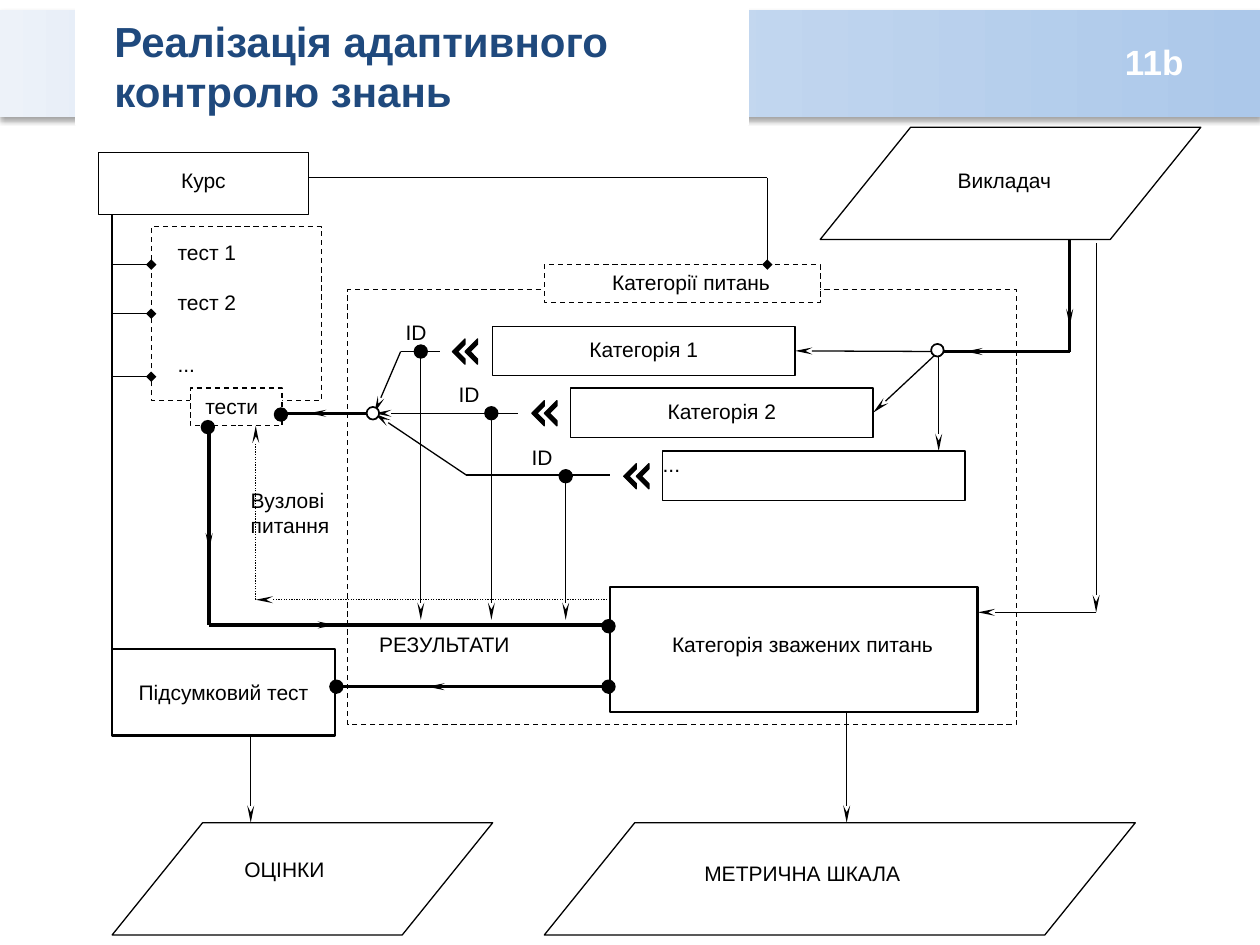
"""Build the slide on adaptive knowledge testing."""
from dataclasses import dataclass

from lxml import etree
from pptx import Presentation
from pptx.dml.color import RGBColor
from pptx.enum.dml import MSO_LINE
from pptx.enum.shapes import MSO_CONNECTOR, MSO_SHAPE
from pptx.enum.text import MSO_ANCHOR, PP_ALIGN
from pptx.oxml import parse_xml
from pptx.oxml.ns import nsdecls, qn
from pptx.util import Inches, Pt

RECT = MSO_SHAPE.RECTANGLE
OVAL = MSO_SHAPE.OVAL
SLANT = MSO_SHAPE.PARALLELOGRAM
NOTCH = MSO_SHAPE.NOTCHED_RIGHT_ARROW
STRAIGHT = MSO_CONNECTOR.STRAIGHT
DASH = MSO_LINE.DASH
DOTS = MSO_LINE.ROUND_DOT
LEFT, MID = PP_ALIGN.LEFT, PP_ALIGN.CENTER
TOP = MSO_ANCHOR.TOP
RIGHT = 3


@dataclass(frozen=True)
class Theme:
    ink: str = "000000"
    paper: str = "FFFFFF"
    title: str = "1F497D"
    band: tuple = ((0, "ACC8EA"), (80, "D8E5F4"), (100, "EDF2F9"))
    font: str = "Arial"
    body: float = 12
    head: float = 24
    mark: float = 20
    thin: float = 0.75
    ring: float = 1
    bold: float = 1.5
    thick: float = 2


@dataclass(frozen=True)
class Box:
    at: tuple
    text: str = ""
    inset: tuple = (0, 0)
    align: PP_ALIGN = MID
    kind: MSO_SHAPE = RECT
    width: float = 0.75
    dash: MSO_LINE | None = None
    fill: str | None = "FFFFFF"
    edge: str = "000000"


@dataclass(frozen=True)
class Line:
    start: tuple
    end: tuple
    tail: str = ""
    width: float = 0.75
    dash: MSO_LINE | None = None


@dataclass(frozen=True)
class Row:
    text: str
    left: float
    top: float
    dot: float
    label: float
    notch: float


THEME = Theme()

FRAMES = [
    Box((2.76, 2.3, 5.31, 3.45), dash=DASH, fill=None),
    Box((1.2, 1.8, 1.35, 1.38), dash=DASH, fill=None),
]
BOXES = [
    Box((0.78, 1.21, 1.67, 0.49), "Курс", (0, 0.12)),
    Box((4.84, 4.66, 2.92, 0.99), "Категорія зважених питань", (0.14, 0.35), width=THEME.bold),
    Box((4.32, 2.1, 2.19, 0.3), "Категорії питань", (0.14, 0.04), dash=DASH),
    Box((1.51, 3.08, 0.73, 0.3), "тести", (0.12, 0.04), LEFT, dash=DASH),
    Box((0.89, 5.15, 1.77, 0.69), "Підсумковий тест", (0, 0.24), width=THEME.bold),
    Box((6.51, 1.01, 3.02, 0.89), kind=SLANT),
    Box((0.89, 6.53, 3.02, 0.89), kind=SLANT),
    Box((4.32, 6.53, 4.69, 0.89), kind=SLANT),
]
ROWS = [
    Row("Категорія 1", 3.91, 2.59, 3.34, 3.22, 3.59),
    Row("Категорія 2", 4.53, 3.08, 3.9, 3.64, 4.22),
    Row("...", 5.26, 3.58, 4.49, 4.22, 4.95),
]
HUB = (7.45, 2.79)
JOIN = (2.97, 3.28)
LINES = [
    Line((0.89, 1.7), (0.89, 5.25)),
    *[Line((0.89, y), (1.2, y), "diamond") for y in (2.1, 2.49, 2.99)],
    Line((2.45, 1.41), (6.09, 1.41)),
    Line((6.09, 1.41), (6.09, 2.1), "diamond"),
    Line(HUB, (7.45, 3.58), "stealth"),
    Line((3.49, 2.79), (3.18, 2.79)),
    Line((3.18, 2.79), JOIN, "stealth"),
    Line((4.11, 3.28), JOIN, "stealth"),
    Line((4.84, 3.77), (3.7, 3.77)),
    Line((3.7, 3.77), JOIN, "stealth"),
    Line((2.03, 4.76), (2.03, 3.38), "stealth", dash=DOTS),
    Line((4.84, 4.76), (2.03, 4.76), "stealth", dash=DOTS),
    Line((8.7, 1.93), (8.7, 4.86), "stealth"),
    Line((8.7, 4.86), (7.76, 4.86), "stealth"),
    Line((1.99, 5.84), (1.99, 6.53), "stealth"),
    Line((6.72, 5.65), (6.72, 6.53), "stealth"),
]
FLOWS = [
    ((8.49, 1.9), (8.49, 2.79), ""), ((8.49, 2.79), HUB, ""),
    ((8.49, 2.1), (8.49, 2.59), "stealth"), ((8.07, 2.79), (7.66, 2.79), "stealth"),
    ((3.01, 3.28), (2.28, 3.28), ""), ((2.86, 3.28), (2.45, 3.28), "stealth"),
    ((1.66, 4.96), (1.66, 3.38), ""), ((1.66, 3.97), (1.66, 4.37), "stealth"),
    ((4.78, 4.96), (1.66, 4.96), ""), ((2.18, 4.96), (2.66, 4.96), "stealth"),
    ((4.84, 5.45), (2.66, 5.45), ""), ((3.91, 5.45), (3.39, 5.45), "stealth"),
]
DOTTED = [(2.23, 3.29), (1.65, 3.39), (4.83, 4.97), (4.83, 5.45), (2.67, 5.45)]
RINGS = [(7.44, 2.78), (2.96, 3.28)]
NOTES = [
    ((1.41, 1.9, 1.04, 0.39), "тест 1"),
    ((1.41, 2.3, 1.04, 0.39), "тест 2"),
    ((1.41, 2.79, 1.04, 0.39), "..."),
    ((7.6, 1.33, 1.75, 0.39), "Викладач"),
    ((1.94, 6.8, 1.94, 0.39), "ОЦІНКИ"),
    ((5.59, 6.83, 2.94, 0.39), "МЕТРИЧНА ШКАЛА"),
    ((1.99, 3.87, 0.73, 0.39), "Вузлові питання"),
    ((3.01, 5.01, 1.63, 0.24), "РЕЗУЛЬТАТИ"),
]


def write(shape, text: str, inset: tuple, size: float, color: str,
          align: PP_ALIGN = LEFT, bold: bool = False) -> None:
    frame = shape.text_frame
    frame.word_wrap = True
    frame.vertical_anchor = TOP
    frame.margin_left, frame.margin_top = map(Inches, inset)
    frame.margin_right = frame.margin_bottom = 0
    frame.text = text
    for para in frame.paragraphs:
        para.alignment = align
        para.font.name, para.font.size, para.font.bold = THEME.font, Pt(size), bold
        para.font.color.rgb = RGBColor.from_string(color)


def note(slide, at: tuple, text: str, size: float = THEME.body, color: str = THEME.ink,
         inset: tuple = (0, 0), bold: bool = False) -> None:
    shape = slide.shapes.add_textbox(*map(Inches, at))
    write(shape, text, inset, size, color, bold=bold)


def draw(slide, box: Box):
    shape = slide.shapes.add_shape(box.kind, *map(Inches, box.at))
    shape.shadow.inherit = False
    if box.fill:
        shape.fill.solid()
        shape.fill.fore_color.rgb = RGBColor.from_string(box.fill)
    else:
        shape.fill.background()
    shape.line.color.rgb = RGBColor.from_string(box.edge)
    shape.line.width = Pt(box.width)
    if box.dash:
        shape.line.dash_style = box.dash
    if box.kind == SLANT:
        shape.adjustments[0] = 0.806
    if box.text:
        write(shape, box.text, box.inset, THEME.body, THEME.ink, box.align)
    return shape


def link(slide, line: Line):
    wire = slide.shapes.add_connector(STRAIGHT, *map(Inches, line.start + line.end))
    wire.line.color.rgb = RGBColor.from_string(THEME.ink)
    wire.line.width = Pt(line.width)
    if line.dash:
        wire.line.dash_style = line.dash
    if line.tail:
        w, size = ("sm", "lg") if line.tail == "stealth" else ("med", "med")
        etree.SubElement(wire.line._get_or_add_ln(), qn("a:tailEnd"), type=line.tail, w=w, len=size)
    etree.SubElement(wire._element.spPr, qn("a:effectLst"))
    return wire


def dot(slide, x: float, y: float, fill: str) -> None:
    draw(slide, Box((x - 0.05, y - 0.05, 0.1, 0.1), kind=OVAL, width=THEME.ring, fill=fill))


def band(slide) -> None:
    shape = draw(slide, Box((0, 0.08, 10, 0.85)))
    shape.line.fill.background()
    props = shape._element.spPr
    stops = "".join(f'<a:gs pos="{pos * 1000}"><a:srgbClr val="{tint}"/></a:gs>' for pos, tint in THEME.band)
    props.replace(props.find(qn("a:solidFill")), parse_xml(
        f'<a:gradFill {nsdecls("a")} rotWithShape="1"><a:gsLst>{stops}</a:gsLst>'
        '<a:lin ang="10800000" scaled="0"/></a:gradFill>'))
    glow = etree.SubElement(props.find(qn("a:effectLst")), qn("a:outerShdw"), blurRad=str(Pt(3.1)),
                            dist=str(Pt(1.8)), dir="5400000", rotWithShape="0")
    tint = etree.SubElement(glow, qn("a:srgbClr"), val=THEME.ink)
    etree.SubElement(tint, qn("a:alpha"), val="35000")


def lane(slide, row: Row) -> None:
    y = row.top + 0.2
    plain = row.text == "..."
    box = draw(slide, Box((row.left, row.top, 2.4, 0.39), row.text,
                          (0, 0 if plain else 0.08), LEFT if plain else MID))
    if not plain:
        link(slide, Line(HUB, (row.left + 2.4, y), "stealth")).end_connect(box, RIGHT)
    for step in (0.1, 0):
        arrow = draw(slide, Box((row.notch + step, y - 0.1, 0.1, 0.2), kind=NOTCH, fill=THEME.ink))
        arrow.rotation = 180
        arrow.adjustments[0], arrow.adjustments[1] = 0.588, 1
    link(slide, Line((row.dot, y), (row.dot, 4.92), "stealth"))
    dot(slide, row.dot, y, THEME.ink)
    note(slide, (row.label, row.top - 0.05, 0.27, 0.2), "ID")


def main() -> None:
    deck = Presentation()
    deck.slide_width, deck.slide_height = Inches(10), Inches(7.5)
    slide = deck.slides.add_slide(deck.slide_layouts[6])
    band(slide)
    for box in FRAMES + BOXES:
        draw(slide, box)
    for row in ROWS:
        lane(slide, row)
    for line in LINES + [Line(*flow, THEME.thick) for flow in FLOWS]:
        link(slide, line)
    for spots, fill in ((DOTTED, THEME.ink), (RINGS, THEME.paper)):
        for x, y in spots:
            dot(slide, x, y, fill)
    for at, text in NOTES:
        note(slide, at, text)
    draw(slide, Box((0.61, 0.05, 5.32, 0.94), width=THEME.thick, edge=THEME.paper))
    note(slide, (0.81, 0.07, 5.47, 0.91), "Реалізація адаптивного\nконтролю знань",
         THEME.head, THEME.title, (0.1, 0.05), True)
    note(slide, (8.83, 0.27, 0.78, 0.44), "11b", THEME.mark, THEME.paper, (0.1, 0.05), True)
    deck.save("out.pptx")


if __name__ == "__main__":
    main()
